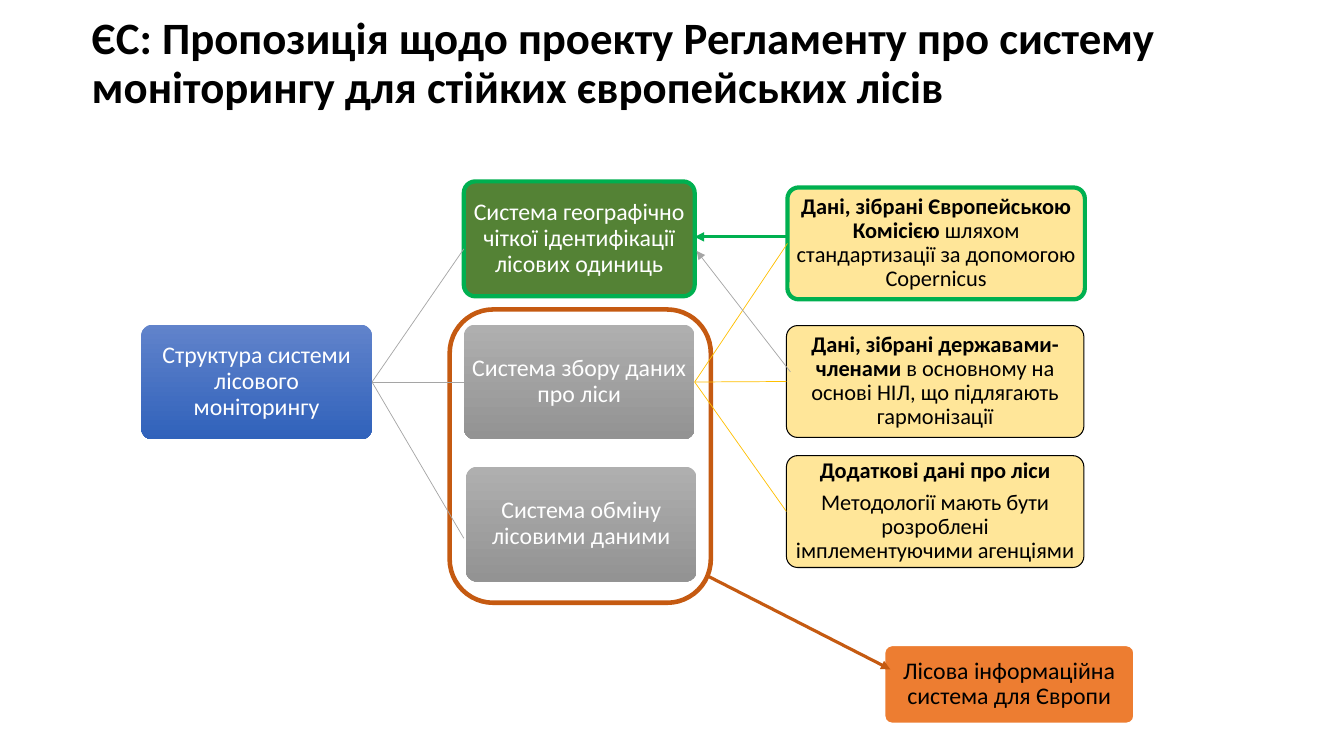
from lxml import etree
from pptx import Presentation
from pptx.dml.color import RGBColor
from pptx.enum.shapes import MSO_CONNECTOR, MSO_SHAPE
from pptx.enum.text import MSO_ANCHOR, MSO_AUTO_SIZE, PP_ALIGN
from pptx.oxml.ns import qn
from pptx.util import Inches, Pt

BLACK = RGBColor(0x00, 0x00, 0x00)
WHITE = RGBColor(0xFF, 0xFF, 0xFF)
BLUE_TOP = RGBColor(0x61, 0x83, 0xCB)
BLUE_END = RGBColor(0x30, 0x62, 0xBB)
GREY_TOP = RGBColor(0xAF, 0xAF, 0xAF)
GREY_END = RGBColor(0x93, 0x93, 0x93)
GREY = RGBColor(0xA5, 0xA5, 0xA5)
FOREST = RGBColor(0x54, 0x82, 0x35)
GREEN = RGBColor(0x00, 0xB0, 0x50)
CREAM = RGBColor(0xFF, 0xE6, 0x99)
GOLD = RGBColor(0xFF, 0xC0, 0x00)
ORANGE = RGBColor(0xED, 0x7D, 0x31)
RUST = RGBColor(0xC5, 0x5A, 0x11)


def write(tf, paragraphs, size, color, align=PP_ALIGN.CENTER,
          anchor=MSO_ANCHOR.MIDDLE, inset=0.05):
    """Fill a text frame; each paragraph is a list of (text, bold) runs."""
    tf.word_wrap = True
    tf.auto_size = MSO_AUTO_SIZE.NONE
    tf.vertical_anchor = anchor
    tf.margin_left = tf.margin_right = Inches(inset)
    tf.margin_top = tf.margin_bottom = Inches(0.05 if size > 16 else 0.04)
    for i, runs in enumerate(paragraphs):
        p = tf.paragraphs[0] if i == 0 else tf.add_paragraph()
        p.alignment = align
        p.line_spacing = 0.9
        if i < len(paragraphs) - 1:
            p.space_after = Pt(5.6)
        for text, bold in runs:
            r = p.add_run()
            r.text = text
            r.font.name = "Calibri"
            r.font.size = Pt(size)
            r.font.bold = bold
            r.font.color.rgb = color


def add_link(start, end, color, width, arrow=False):
    """Draw a straight line between two points."""
    line = s.shapes.add_connector(MSO_CONNECTOR.STRAIGHT,
                                  *[Inches(v) for v in (*start, *end)])
    line.line.color.rgb = color
    line.line.width = Pt(width)
    if arrow:
        etree.SubElement(line.line._get_or_add_ln(), qn("a:tailEnd"), type="triangle")
    etree.SubElement(line._element.spPr, qn("a:effectLst"))
    return line


prs = Presentation()
prs.slide_width, prs.slide_height = Inches(13.33), Inches(7.5)
s = prs.slides.add_slide(prs.slide_layouts[5])

# Title
title = s.shapes.title
title.left, title.top = Inches(0.81), Inches(0.11)
title.width, title.height = Inches(11.44), Inches(0.86)
write(title.text_frame,
      [[("ЄС: Пропозиція щодо проекту Регламенту про систему "
         "моніторингу для стійких європейських лісів", True)]],
      32, BLACK, align=PP_ALIGN.LEFT, anchor=MSO_ANCHOR.TOP, inset=0.1)

# Boxes: name, position, corner, fill (pair = gradient), outline, size, colour, text
SYSTEM, DATA = (2.29, 1.14), (2.95, 1.11)
boxes = [
    ("frame", (4.46, 3.07, 2.59, 2.91), 0.167, WHITE, (RUST, 3.25), 17, BLACK, []),
    ("structure", (1.4, 3.22, *SYSTEM), 0.1, (BLUE_TOP, BLUE_END), None, 17, WHITE,
     [[("Структура системи лісового моніторингу", False)]]),
    ("units", (4.6, 1.8, *SYSTEM), 0.1, FOREST, (GREEN, 3), 17, WHITE,
     [[("Система географічно чіткої ідентифікації лісових одиниць", False)]]),
    ("collection", (4.6, 3.22, *SYSTEM), 0.1, (GREY_TOP, GREY_END), None, 17, WHITE,
     [[("Система збору даних про ліси", False)]]),
    ("exchange", (4.62, 4.63, *SYSTEM), 0.1, (GREY_TOP, GREY_END), None, 17, WHITE,
     [[("Система обміну лісовими даними", False)]]),
    ("commission", (7.81, 1.86, *DATA), 0.1, CREAM, (GREEN, 3), 16, BLACK,
     [[("Дані, зібрані Європейською Комісією ", True),
       ("шляхом стандартизації за допомогою Copernicus", False)]]),
    ("members", (7.8, 3.23, *DATA), 0.1, CREAM, (BLACK, 0.75), 16, BLACK,
     [[("Дані, зібрані державами-членами ", True),
       ("в основному на основі НІЛ, що підлягають гармонізації", False)]]),
    ("extra", (7.8, 4.52, *DATA), 0.1, CREAM, (BLACK, 0.75), 16, BLACK,
     [[("Додаткові дані про ліси", True)],
      [("Методології мають бути розроблені імплементуючими агенціями", False)]]),
    ("information", (8.77, 6.4, 2.48, 0.78), 0.1, ORANGE, (WHITE, 1.5), 17, BLACK,
     [[("Лісова інформаційна система для Європи", False)]]),
]
shapes = {}
for name, place, corner, fill, outline, size, color, paragraphs in boxes:
    sp = s.shapes.add_shape(MSO_SHAPE.ROUNDED_RECTANGLE, *[Inches(v) for v in place])
    sp.shadow.inherit = False
    sp.adjustments[0] = corner
    if isinstance(fill, RGBColor):
        sp.fill.solid()
        sp.fill.fore_color.rgb = fill
    else:
        sp.fill.gradient()
        sp.fill.gradient_angle = 270
        for stop, stop_color in zip(sp.fill.gradient_stops, fill):
            stop.color.rgb = stop_color
    if outline:
        sp.line.color.rgb = outline[0]
        sp.line.width = Pt(outline[1])
    else:
        sp.line.fill.background()
    write(sp.text_frame, paragraphs, size, color)
    shapes[name] = sp

# Thin branches from the structure and from data collection
branches = [
    ("structure", (3.69, 3.79), None, (4.6, 2.47), GREY),
    ("structure", (3.69, 3.79), "collection", (4.6, 3.79), GREY),
    ("structure", (3.69, 3.79), None, (4.6, 5.34), GREY),
    ("collection", (6.89, 3.79), "commission", (7.81, 2.41), GOLD),
    ("collection", (6.89, 3.79), "members", (7.8, 3.79), GOLD),
    ("collection", (6.89, 3.79), "extra", (7.8, 5.07), GOLD),
]
for source, start, target, end, color in branches:
    line = add_link(start, end, color, 0.5)
    line.begin_connect(shapes[source], 3)
    if target:
        line.end_connect(shapes[target], 1)

# Arrows
add_link((7.01, 5.71), (8.83, 6.64), RUST, 2.25, arrow=True)
add_link((7.8, 2.35), (6.89, 2.35), GREEN, 2.25, arrow=True)
add_link((7.84, 3.69), (6.91, 2.49), GREY, 0.5, arrow=True)

prs.save("out.pptx")
